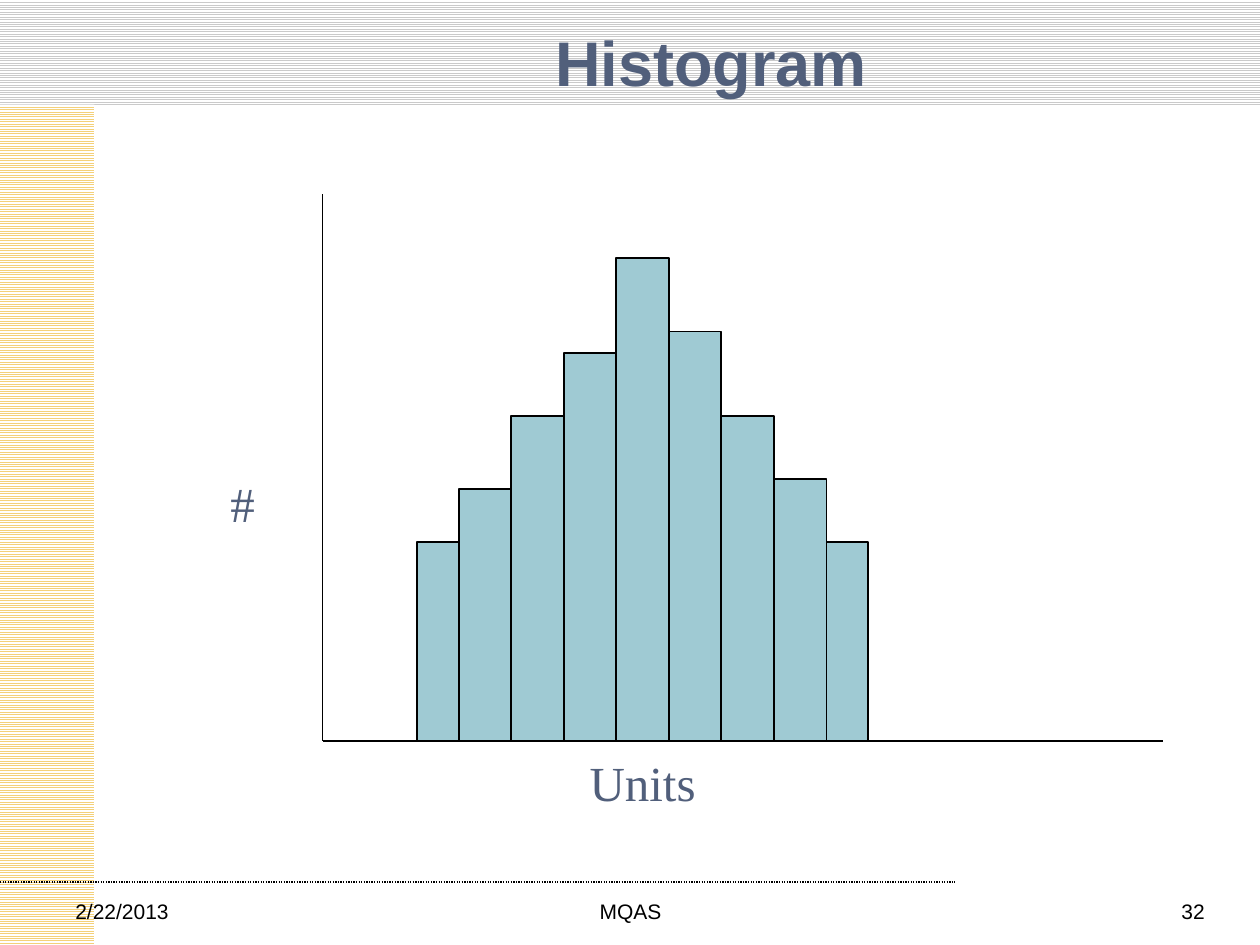
from dataclasses import dataclass

from lxml.etree import SubElement
from pptx import Presentation
from pptx.dml.color import RGBColor
from pptx.enum.dml import MSO_LINE, MSO_PATTERN
from pptx.enum.shapes import MSO_CONNECTOR, MSO_SHAPE
from pptx.enum.text import MSO_ANCHOR, PP_ALIGN
from pptx.oxml.ns import qn
from pptx.shapes.autoshape import Shape
from pptx.shapes.connector import Connector
from pptx.slide import Slide
from pptx.util import Inches, Pt

BLACK = "000000"
WHITE = "FFFFFF"
SLATE = "515F7B"
BAR_FILL = "9FCAD3"
BASELINE = 5.88
AXIS_LEFT = 2.56
FIRST_BAR_LEFT = 3.31
FOOTER_TOP, FOOTER_HEIGHT = 7.08, 0.27


@dataclass(frozen=True)
class Band:
    left: float
    top: float
    width: float
    height: float
    color: str


@dataclass(frozen=True)
class Bar:
    width: float
    height: float


@dataclass(frozen=True)
class Label:
    text: str
    left: float
    top: float
    width: float
    height: float
    size: int = 12
    font: str = "Arial"
    color: str = BLACK
    bold: bool = False
    align: PP_ALIGN = PP_ALIGN.LEFT
    anchor: MSO_ANCHOR = MSO_ANCHOR.TOP
    wrap: bool = True


BANDS = [
    Band(0, 0, 10, 0.83, "CACACA"),
    Band(0, 0.83, 0.75, 6.67, "F4D17A"),
]

END_WIDTH, INNER_WIDTH = 0.33, 0.417
BARS = [
    Bar(END_WIDTH, 1.58),
    *(Bar(INNER_WIDTH, height) for height in (2, 2.58, 3.08, 3.83, 3.25, 2.58, 2.08)),
    Bar(END_WIDTH, 1.58),
]

LABELS = [
    Label("MQAS", 3.42, FOOTER_TOP, 3.17, FOOTER_HEIGHT, align=PP_ALIGN.CENTER),
    Label("32", 7.33, FOOTER_TOP, 2.33, FOOTER_HEIGHT, align=PP_ALIGN.RIGHT),
    Label("2/22/2013", 0.5, FOOTER_TOP, 2.33, FOOTER_HEIGHT),
    Label("Histogram", 1.72, 0.13, 7.85, 0.71, 36, color=SLATE, bold=True,
          align=PP_ALIGN.CENTER, anchor=MSO_ANCHOR.MIDDLE),
    Label("Units", 3.64, 5.96, 2.92, 0.5, 28, "Times New Roman", SLATE,
          align=PP_ALIGN.CENTER, anchor=MSO_ANCHOR.MIDDLE, wrap=False),
    Label("#", 1.73, 3.71, 0.67, 0.57, 28, "Times New Roman", SLATE),
]


def rgb(color: str) -> RGBColor:
    return RGBColor.from_string(color)


def add_rectangle(slide: Slide, left: float, top: float, width: float, height: float) -> Shape:
    rectangle = slide.shapes.add_shape(
        MSO_SHAPE.RECTANGLE, Inches(left), Inches(top), Inches(width), Inches(height))
    rectangle.shadow.inherit = False
    return rectangle


def add_band(slide: Slide, band: Band) -> None:
    rectangle = add_rectangle(slide, band.left, band.top, band.width, band.height)
    rectangle.fill.patterned()
    rectangle.fill.pattern = MSO_PATTERN.LIGHT_HORIZONTAL
    rectangle.fill.fore_color.rgb = rgb(band.color)
    rectangle.fill.back_color.rgb = rgb(WHITE)
    rectangle.line.fill.background()


def add_bars(slide: Slide, bars: list[Bar]) -> None:
    """Stand the bars side by side on the baseline."""
    left = FIRST_BAR_LEFT
    for bar in bars:
        rectangle = add_rectangle(slide, left, BASELINE - bar.height, bar.width, bar.height)
        rectangle.fill.solid()
        rectangle.fill.fore_color.rgb = rgb(BAR_FILL)
        rectangle.line.color.rgb = rgb(BLACK)
        rectangle.line.width = Pt(1)
        left += bar.width


def add_line(slide: Slide, start: tuple[float, float], end: tuple[float, float],
             width: float = 1) -> Connector:
    line = slide.shapes.add_connector(
        MSO_CONNECTOR.STRAIGHT, *map(Inches, start), *map(Inches, end))
    line.line.color.rgb = rgb(BLACK)
    line.line.width = Pt(width)
    SubElement(line._element.spPr, qn("a:effectLst"))
    return line


def add_label(slide: Slide, label: Label) -> None:
    box = slide.shapes.add_textbox(
        Inches(label.left), Inches(label.top), Inches(label.width), Inches(label.height))
    frame = box.text_frame
    frame.word_wrap = label.wrap
    frame.vertical_anchor = label.anchor
    paragraph = frame.paragraphs[0]
    paragraph.text = label.text
    paragraph.alignment = label.align
    paragraph.font.name = label.font
    paragraph.font.size = Pt(label.size)
    paragraph.font.bold = label.bold
    paragraph.font.color.rgb = rgb(label.color)


def main() -> None:
    deck = Presentation()
    deck.slide_width, deck.slide_height = Inches(10), Inches(7.5)
    slide = deck.slides.add_slide(deck.slide_layouts[6])

    for band in BANDS:
        add_band(slide, band)
    footer_rule = add_line(slide, (0, 7), (7.58, 7), 0.75)
    footer_rule.line.dash_style = MSO_LINE.ROUND_DOT

    add_line(slide, (AXIS_LEFT, 1.54), (AXIS_LEFT, BASELINE))
    add_line(slide, (AXIS_LEFT, BASELINE), (9.23, BASELINE))
    add_bars(slide, BARS)
    for label in LABELS:
        add_label(slide, label)

    deck.save("out.pptx")


if __name__ == "__main__":
    main()
